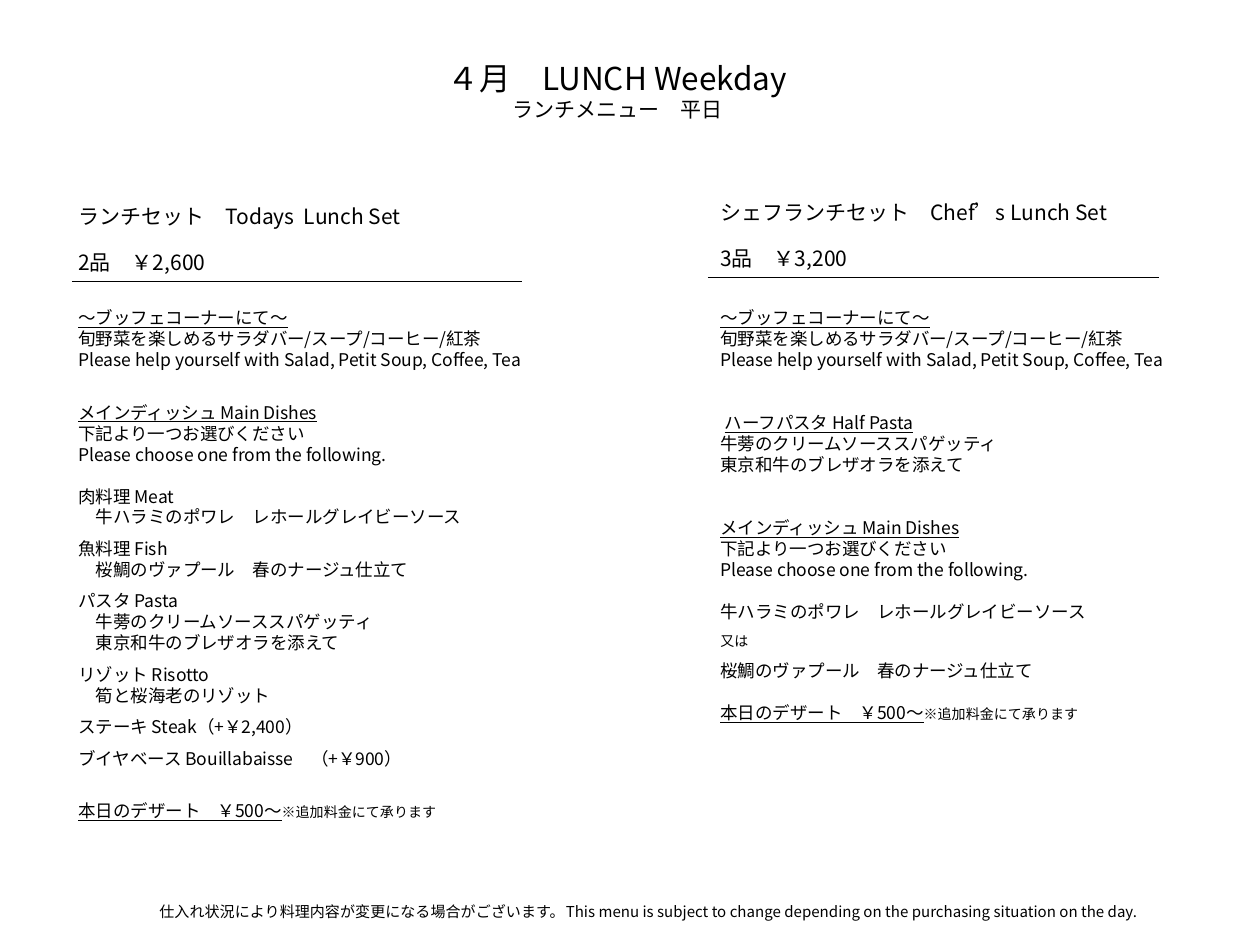
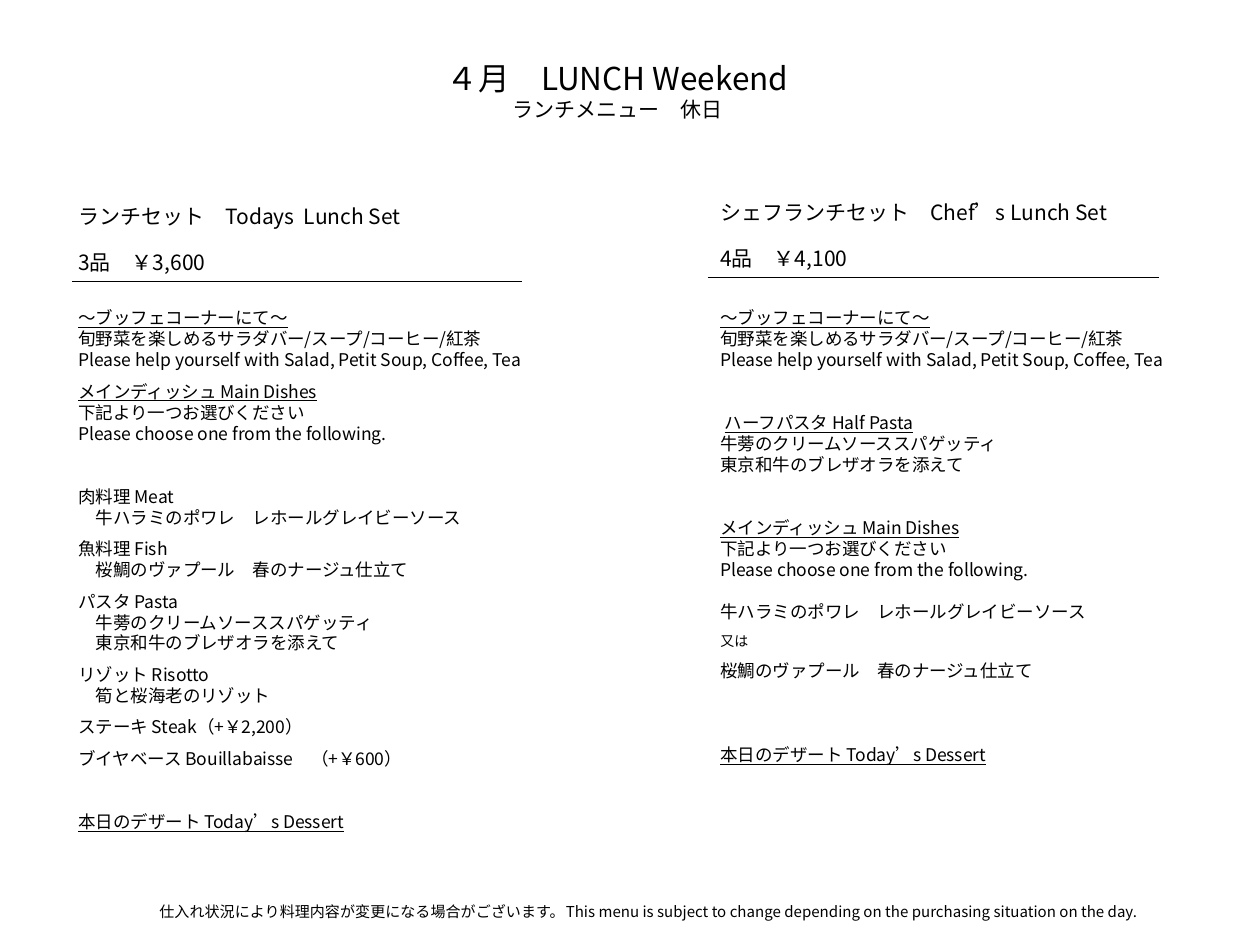
from dataclasses import dataclass

from lxml.etree import SubElement
from pptx import Presentation
from pptx.dml.color import RGBColor
from pptx.enum.shapes import MSO_CONNECTOR as Connector
from pptx.enum.text import MSO_AUTO_SIZE as AutoSize, PP_ALIGN as Align
from pptx.oxml.ns import qn
from pptx.util import Pt

COLORS = {"ink": "000000", "paper": "FFFFFF"}
FONTS = {"jp": "Noto Sans CJK JP", "en": "Noto Sans CJK TC"}
EMU_PER_PX = 914400 / 126
LINE_HEIGHT = 1.2
LEFT, RIGHT = 66, 708
BODY_TOP, BODY_WIDTH = 301, 486
DISH_INDENT = 10
MEAT = "牛ハラミのポワレ　レホールグレイビーソース"
FISH = "桜鯛のヴァプール　春のナージュ仕立て"
PASTA = ["牛蒡のクリームソーススパゲッティ", "東京和牛のブレザオラを添えて"]
NOTICE = ("仕入れ状況により料理内容が変更になる場合がございます。"
          "This menu is subject to change depending on the purchasing situation on the day.")


@dataclass
class Span:
    """A run of text in one style."""
    text: str
    size: float = 10
    font: str = "jp"
    underline: bool = False


@dataclass
class Line:
    """A paragraph with its space before and indent in points."""
    spans: list
    before: float = 0
    indent: float = 0


def plain(text, before=0, indent=0, **style):
    """Return a line of one span."""
    return Line([Span(text, **style)], before, indent)


def heading(text, before=0, indent=0):
    """Return an underlined section heading."""
    return plain(text, before, indent, underline=True)


class Menu:
    """Draws menu elements on the current slide in one style."""

    def __init__(self):
        self.presentation = Presentation()
        self.presentation.slide_width = self.px(1260)
        self.presentation.slide_height = self.px(945)
        self.slide = None

    def px(self, length):
        """Convert px to EMU."""
        return round(length * EMU_PER_PX)

    def add_slide(self):
        """Start a blank slide."""
        self.slide = self.presentation.slides.add_slide(self.presentation.slide_layouts[6])
        fill = self.slide.background.fill
        fill.solid()
        fill.fore_color.rgb = RGBColor.from_string(COLORS["paper"])

    def add_run(self, paragraph, span):
        """Add one styled run."""
        run = paragraph.add_run()
        run.text = span.text
        run.font.size = Pt(span.size)
        run.font.underline = span.underline
        run.font.color.rgb = RGBColor.from_string(COLORS["ink"])
        run.font.name = FONTS[span.font]
        SubElement(run._r.get_or_add_rPr(), qn("a:ea"), typeface=FONTS[span.font])

    def text(self, left, top, width, height, lines, align=Align.LEFT):
        """Add a text box holding the lines."""
        box = self.slide.shapes.add_textbox(*map(self.px, (left, top, width, height)))
        frame = box.text_frame
        frame.word_wrap = True
        frame.auto_size = AutoSize.SHAPE_TO_FIT_TEXT
        for index, line in enumerate(lines):
            paragraph = frame.add_paragraph() if index else frame.paragraphs[0]
            paragraph.alignment = align
            paragraph.space_before = Pt(line.before)
            paragraph.line_spacing = Pt(max(span.size for span in line.spans) * LINE_HEIGHT)
            if line.indent:
                paragraph._p.get_or_add_pPr().set("marL", str(Pt(line.indent)))
            for span in line.spans:
                self.add_run(paragraph, span)

    def rule(self, left, top, width):
        """Add a thin horizontal line."""
        ends = map(self.px, (left, top, left + width, top))
        line = self.slide.shapes.add_connector(Connector.STRAIGHT, *ends)
        line.line.color.rgb = RGBColor.from_string(COLORS["ink"])
        line.line.width = Pt(0.5)
        SubElement(line._element.spPr, qn("a:effectLst"))

    def title(self, english, japanese):
        """Add the page title."""
        lines = [Line([Span("４月　", 18), Span(english, 18, "en")]), plain(japanese, size=12)]
        self.text(421, 53, 393, 102, lines, Align.CENTER)

    def set_header(self, left, top, width, japanese, english, price):
        """Add the name and price of a set."""
        lines = [Line([Span(japanese, 12), Span(english, 12, "en")]),
                 plain(price, before=12, size=12)]
        self.text(left, top, width, 84, lines)

    def notice(self):
        """Add the footer notice."""
        self.text(LEFT, 896, 1166, 30, [plain(NOTICE, size=8.6)], Align.CENTER)


def buffet():
    """Return the buffet section."""
    return [heading("～ブッフェコーナーにて～"),
            plain("旬野菜を楽しめるサラダバー/スープ/コーヒー/紅茶"),
            plain("Please help yourself with Salad, Petit Soup, Coffee, Tea", font="en")]


def main_dishes(before):
    """Return the introduction to the main dishes."""
    return [heading("メインディッシュ Main Dishes", before),
            plain("下記より一つお選びください"),
            plain("Please choose one from the following.", font="en")]


def dessert(page, before):
    """Return the dessert line."""
    spans = [Span(page["dessert"], underline=True)]
    if page["dessert_note"]:
        spans.append(Span(page["dessert_note"], 8))
    return [Line(spans, before)]


def todays_lines(page):
    """Return the body of the lunch set."""
    main_gap, dish_gap, dessert_gap = page["todays_gaps"]
    courses = [("肉料理 Meat", [MEAT]), ("魚料理 Fish", [FISH]), ("パスタ Pasta", PASTA),
               ("リゾット Risotto", ["筍と桜海老のリゾット"]),
               (f"ステーキ Steak（+￥{page['steak']}）", []),
               (f"ブイヤベース Bouillabaisse　（+￥{page['bouillabaisse']}）", [])]
    lines = buffet() + main_dishes(main_gap)
    for index, (course, dishes) in enumerate(courses):
        lines.append(plain(course, 6 if index else dish_gap))
        lines += [plain(dish, indent=DISH_INDENT) for dish in dishes]
    return lines + dessert(page, dessert_gap)


def chef_lines(page):
    """Return the body of the chef's set."""
    return [*buffet(),
            heading("ハーフパスタ Half Pasta", 24, 2.5),
            *map(plain, PASTA),
            *main_dishes(24),
            plain(MEAT, 12),
            plain("又は", 6, size=8),
            plain(FISH, 6),
            *dessert(page, page["chef_gap"])]


PAGES = [
    {"title": ("LUNCH Weekday", "ランチメニュー　平日"),
     "todays_price": "2品　￥2,600", "chef_price": "3品　￥3,200",
     "steak": "2,400", "bouillabaisse": "900",
     "dessert": "本日のデザート　￥500～", "dessert_note": "※追加料金にて承ります",
     "todays_gaps": (18, 12, 18), "chef_gap": 12, "chef_height": 432},
    {"title": ("LUNCH Weekend", "ランチメニュー　休日"),
     "todays_price": "3品　￥3,600", "chef_price": "4品　￥4,100",
     "steak": "2,200", "bouillabaisse": "600",
     "dessert": "本日のデザート Today’s Dessert", "dessert_note": "",
     "todays_gaps": (6, 24, 24), "chef_gap": 36, "chef_height": 475},
]


def main():
    """Build the menu, one slide per page."""
    menu = Menu()
    for page in PAGES:
        menu.add_slide()
        menu.set_header(LEFT, 197, 393, "ランチセット　", "Todays  Lunch Set", page["todays_price"])
        menu.text(LEFT, BODY_TOP, BODY_WIDTH, 553, todays_lines(page))
        menu.notice()
        menu.text(RIGHT, BODY_TOP, BODY_WIDTH, page["chef_height"], chef_lines(page))
        menu.title(*page["title"])
        menu.set_header(RIGHT, 193, 442, "シェフランチセット　", "Chef’s Lunch Set", page["chef_price"])
        menu.rule(72, 281, 450)
        menu.rule(RIGHT, 277, 451)
    menu.presentation.save("out.pptx")


if __name__ == "__main__":
    main()
